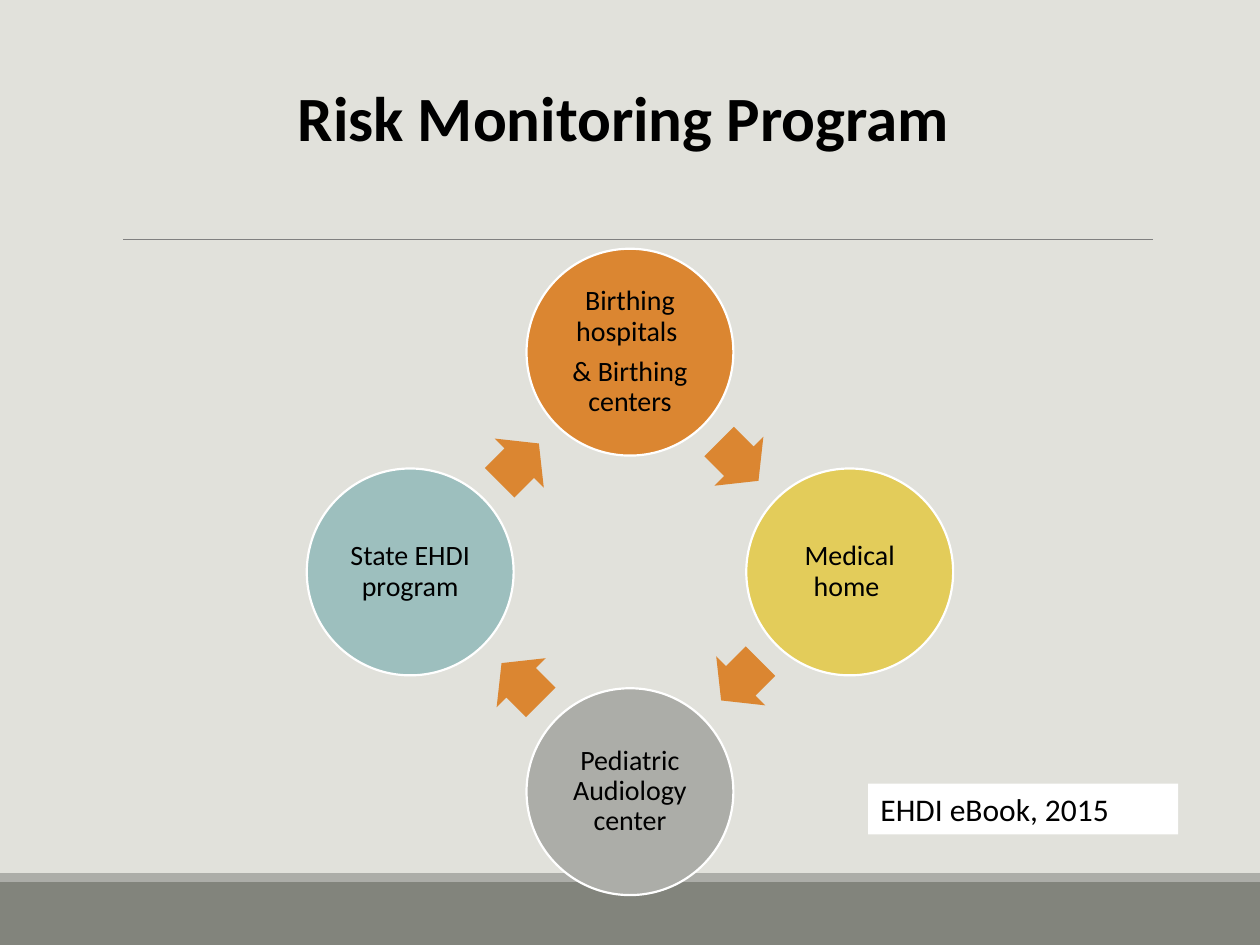
from dataclasses import dataclass
from math import cos, radians, sin

from lxml.etree import SubElement
from pptx import Presentation
from pptx.dml.color import RGBColor
from pptx.enum.shapes import MSO_CONNECTOR, MSO_SHAPE
from pptx.enum.text import MSO_ANCHOR, MSO_AUTO_SIZE, PP_ALIGN
from pptx.oxml.ns import qn
from pptx.util import Cm, Pt


@dataclass(frozen=True)
class Theme:
    font: str = "Calibri"
    background: str = "E1E1DB"
    footer: str = "82847C"
    gray: str = "ACADA8"
    rule: str = "808080"
    orange: str = "DB8631"
    yellow: str = "E3CC5A"
    teal: str = "9DBFBE"
    white: str = "FFFFFF"
    text: str = "000000"
    title_size: int = 36
    caption_size: int = 18
    step_size: int = 16


theme = Theme()


def add_filled_shape(kind, left, top, width, height, color):
    """Add a borderless, shadowless shape, with lengths in centimetres."""
    shape = slide.shapes.add_shape(kind, Cm(left), Cm(top), Cm(width), Cm(height))
    shape.shadow.inherit = False
    shape.fill.solid()
    shape.fill.fore_color.rgb = RGBColor.from_string(color)
    shape.line.fill.background()
    return shape


def write_text(paragraph, text, size, alignment, bold=False):
    paragraph.alignment = alignment
    run = paragraph.add_run()
    run.text = text
    run.font.name = theme.font
    run.font.size = Pt(size)
    run.font.bold = bold
    run.font.color.rgb = RGBColor.from_string(theme.text)


presentation = Presentation()
presentation.slide_width = Cm(25.4)
presentation.slide_height = Cm(19.05)
slide = presentation.slides.add_slide(presentation.slide_layouts[6])
slide.background.fill.solid()
slide.background.fill.fore_color.rgb = RGBColor.from_string(theme.background)

# Footer bands and the rule below the title
add_filled_shape(MSO_SHAPE.RECTANGLE, 0, 17.78, 25.4, 1.27, theme.footer)
add_filled_shape(MSO_SHAPE.RECTANGLE, 0, 17.6, 25.4, 0.18, theme.gray)
rule = slide.shapes.add_connector(
    MSO_CONNECTOR.STRAIGHT, Cm(2.48), Cm(4.83), Cm(23.24), Cm(4.83)
)
rule.line.color.rgb = RGBColor.from_string(theme.rule)
rule.line.width = Pt(0.5)
SubElement(rule.element.spPr, qn("a:effectLst"))

# Cycle of steps, clockwise from the top, each followed by an arrow
center_x, center_y = 12.7, 11.53
ring_radius, circle_size = 4.43, 4.17
arrow_radius, arrow_width, arrow_height = 3.13, 1.12, 1.4
steps = [
    (["Birthing hospitals ", "& Birthing centers"], theme.orange),
    (["Medical home "], theme.yellow),
    (["Pediatric Audiology center"], theme.gray),
    (["State EHDI program"], theme.teal),
]
for index, (lines, color) in enumerate(steps):
    angle = index * 360 / len(steps)
    circle = add_filled_shape(
        MSO_SHAPE.OVAL,
        center_x + ring_radius * sin(radians(angle)) - circle_size / 2,
        center_y - ring_radius * cos(radians(angle)) - circle_size / 2,
        circle_size, circle_size, color,
    )
    circle.line.color.rgb = RGBColor.from_string(theme.white)
    circle.line.width = Pt(1.25)
    frame = circle.text_frame
    frame.word_wrap = True
    frame.vertical_anchor = MSO_ANCHOR.MIDDLE
    frame.margin_left = frame.margin_right = Cm(0.05)
    frame.margin_top = frame.margin_bottom = Cm(0.05)
    for number, line in enumerate(lines):
        paragraph = frame.add_paragraph() if number else frame.paragraphs[0]
        paragraph.line_spacing = 0.9
        paragraph.space_after = Pt(0.35 * theme.step_size)
        write_text(paragraph, line, theme.step_size, PP_ALIGN.CENTER)

    arrow_angle = radians(angle + 44.5)
    arrow = add_filled_shape(
        MSO_SHAPE.RIGHT_ARROW,
        center_x + arrow_radius * sin(arrow_angle) - arrow_width / 2,
        center_y - arrow_radius * cos(arrow_angle) - arrow_height / 2,
        arrow_width, arrow_height, theme.orange,
    )
    arrow.adjustments[0] = 0.6
    arrow.adjustments[1] = 0.5
    arrow.rotation = angle + 45

# Title and source caption
title = slide.shapes.add_textbox(Cm(0.41), Cm(1.45), Cm(24.61), Cm(1.8))
title.text_frame.word_wrap = True
title.text_frame.auto_size = MSO_AUTO_SIZE.SHAPE_TO_FIT_TEXT
write_text(title.text_frame.paragraphs[0], "Risk Monitoring Program ",
           theme.title_size, PP_ALIGN.CENTER, bold=True)

caption = add_filled_shape(MSO_SHAPE.RECTANGLE, 17.5, 15.8, 6.25, 1.02, theme.white)
caption.text_frame.word_wrap = True
caption.text_frame.auto_size = MSO_AUTO_SIZE.SHAPE_TO_FIT_TEXT
caption.text_frame.vertical_anchor = MSO_ANCHOR.TOP
write_text(caption.text_frame.paragraphs[0], "EHDI eBook, 2015",
           theme.caption_size, PP_ALIGN.LEFT)

presentation.save("out.pptx")
